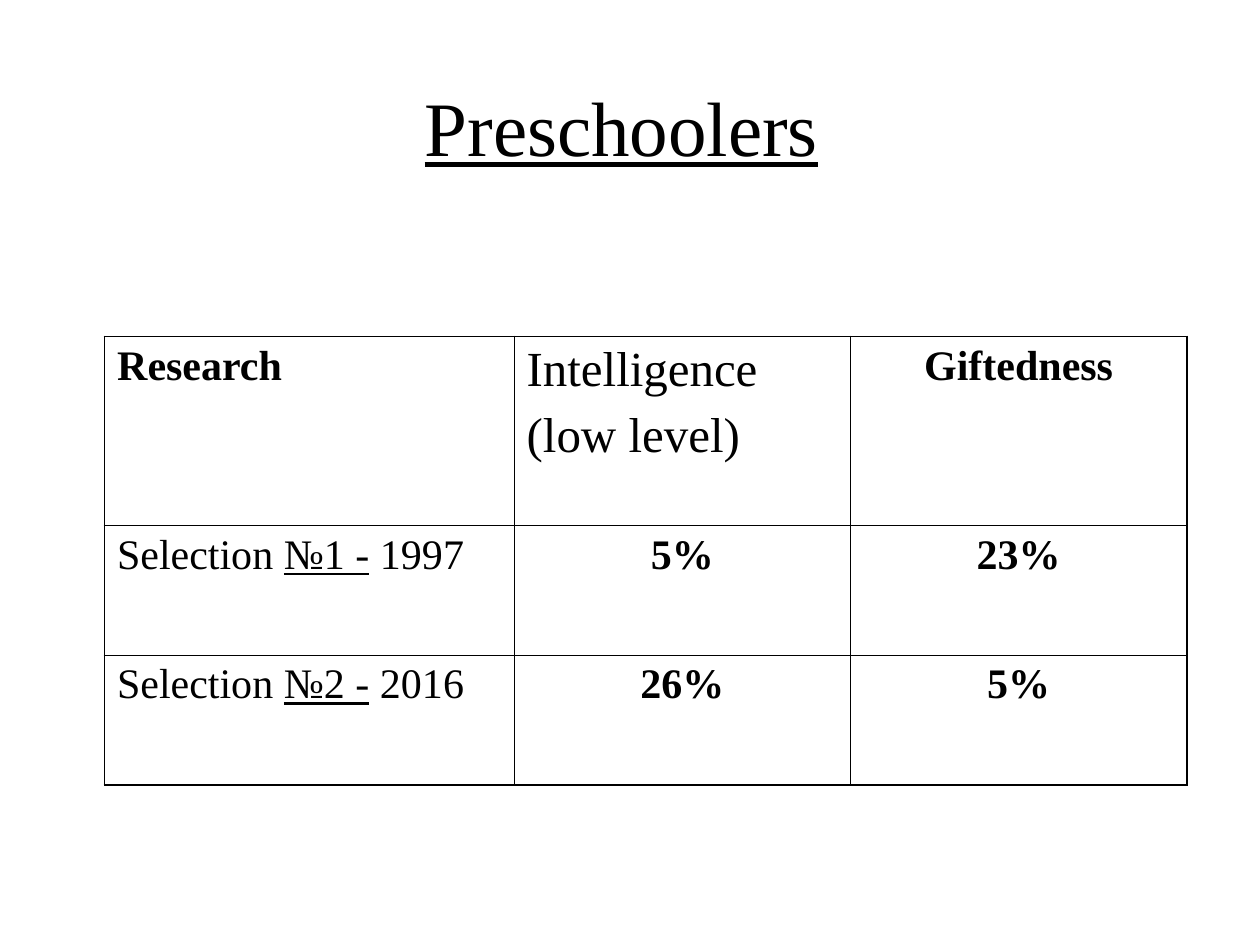
"""Build the Preschoolers slide with its research table."""
import pptx
import pptx.dml.color
import pptx.enum.text
import pptx.oxml
import pptx.oxml.ns
import pptx.util
from pptx.util import Inches

COLORS = {"text": "000000", "border": "000000", "background": "FFFFFF"}
FONT = "Times New Roman"
ALIGN = pptx.enum.text.PP_ALIGN
OUTER_WIDTH, INNER_WIDTH = 1.08, 0.45
COLUMN_WIDTHS = [3.25, 2.67, 2.67]
ROW_HEIGHTS = [1.5, 1.03, 1.03]
SELECTIONS = [("№1 -", " 1997", "5%", "23%"), ("№2 -", " 2016", "26%", "5%")]


def add_run(paragraph, text, size=24, bold=False, underline=False):
    """Add one formatted run to a paragraph."""
    run = paragraph.add_run()
    run.text = text
    run.font.name = FONT
    run.font.size = pptx.util.Pt(size)
    run.font.bold = bold
    run.font.underline = underline
    run.font.color.rgb = pptx.dml.color.RGBColor.from_string(COLORS["text"])


def format_paragraph(paragraph, alignment=ALIGN.LEFT, space_before=6):
    """Set alignment and spacing, and return the paragraph."""
    paragraph.alignment = alignment
    paragraph.space_before = pptx.util.Pt(space_before)
    return paragraph


def add_title(slide):
    """Place and fill the title placeholder."""
    title = slide.shapes.title
    title.left, title.top = Inches(0.51), Inches(0.37)
    title.width, title.height = Inches(9), Inches(1.25)
    frame = title.text_frame
    frame.vertical_anchor = pptx.enum.text.MSO_ANCHOR.MIDDLE
    paragraph = format_paragraph(frame.paragraphs[0], ALIGN.CENTER, 0)
    add_run(paragraph, "Preschoolers", 44, underline=True)
    add_run(paragraph, " ", 44)


def set_borders(cell, outer_sides):
    """Draw the cell borders, thicker on the outer sides."""
    properties = cell._tc.get_or_add_tcPr()
    for side in "LRTB":
        width = pptx.util.Pt(OUTER_WIDTH if side in outer_sides else INNER_WIDTH)
        properties.append(pptx.oxml.parse_xml(
            f'<a:ln{side} {pptx.oxml.ns.nsdecls("a")} w="{width}"><a:solidFill>'
            f'<a:srgbClr val="{COLORS["border"]}"/></a:solidFill></a:ln{side}>'))


def add_grid(slide):
    """Add the bordered table and return it."""
    rows, columns = len(ROW_HEIGHTS), len(COLUMN_WIDTHS)
    table = slide.shapes.add_table(
        rows, columns, Inches(0.83), Inches(2.67),
        Inches(sum(COLUMN_WIDTHS)), Inches(sum(ROW_HEIGHTS))).table
    table.first_row = table.horz_banding = False
    for column, width in zip(table.columns, COLUMN_WIDTHS):
        column.width = Inches(width)
    for row, height in zip(table.rows, ROW_HEIGHTS):
        row.height = Inches(height)
    for row in range(rows):
        for column in range(columns):
            edges = {"L": column == 0, "R": column == columns - 1,
                     "T": row == 0, "B": row == rows - 1}
            cell = table.cell(row, column)
            set_borders(cell, [side for side, outer in edges.items() if outer])
            cell.fill.background()
    return table


def fill_cell(cell, text, alignment=ALIGN.CENTER):
    """Write one bold text in a cell."""
    paragraph = format_paragraph(cell.text_frame.paragraphs[0], alignment)
    add_run(paragraph, text, bold=True)


def fill_table(table):
    """Write the header row and the selection rows."""
    fill_cell(table.cell(0, 0), "Research", ALIGN.LEFT)
    frame = table.cell(0, 1).text_frame
    add_run(format_paragraph(frame.paragraphs[0], space_before=0), "Intelligence", 28)
    add_run(format_paragraph(frame.add_paragraph(), space_before=7), "(low level)", 28)
    fill_cell(table.cell(0, 2), "Giftedness")
    for row, (number, year, *values) in enumerate(SELECTIONS, 1):
        paragraph = format_paragraph(table.cell(row, 0).text_frame.paragraphs[0])
        add_run(paragraph, "Selection ")
        add_run(paragraph, number, underline=True)
        add_run(paragraph, year)
        for column, value in enumerate(values, 1):
            fill_cell(table.cell(row, column), value)


def main():
    """Create the presentation and save it."""
    presentation = pptx.Presentation()
    presentation.slide_width, presentation.slide_height = Inches(10), Inches(7.5)
    slide = presentation.slides.add_slide(presentation.slide_layouts[5])
    background = slide.background.fill
    background.solid()
    background.fore_color.rgb = pptx.dml.color.RGBColor.from_string(COLORS["background"])
    add_title(slide)
    fill_table(add_grid(slide))
    presentation.save("out.pptx")


if __name__ == "__main__":
    main()
